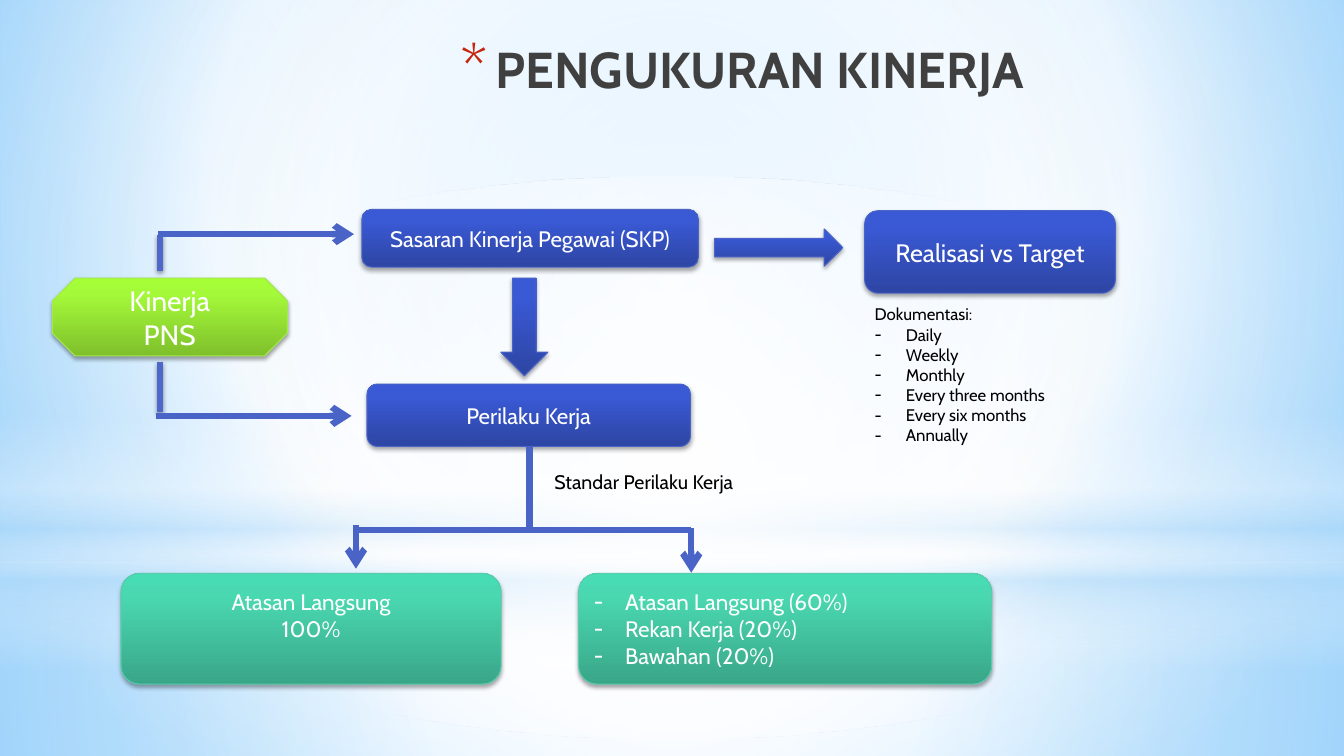
import lxml.etree
import pptx
import pptx.dml.color
import pptx.enum.shapes
import pptx.enum.text
import pptx.oxml.ns
import pptx.util

Cm, Pt = pptx.util.Cm, pptx.util.Pt
SHAPE = pptx.enum.shapes.MSO_SHAPE
ALIGN = pptx.enum.text.PP_ALIGN
ANCHOR = pptx.enum.text.MSO_ANCHOR

WIDTH, HEIGHT = 33.87, 19.05
FONT = "Cabin"
CENTRE = (50, 50, 50, 50)

# Gradient from bottom to top, then the outline
BLUE = ("2D45A3", "3A59D4", "3758D7"), "4963C7"
TEAL = ("39A688", "4AD8B1", "47DCB3"), "58CCAC"
GREEN = ("7FC02C", "A4F939", "A6FE36"), "A4E94C"


def colour(value):
    return pptx.dml.color.RGBColor.from_string(value)


def add_node(parent, tag, **attributes):
    node = lxml.etree.SubElement(parent, pptx.oxml.ns.qn(tag))
    for name, value in attributes.items():
        node.set(name, str(value))
    return node


def add_colour_node(parent, value, opacity=100):
    node = add_node(parent, "a:srgbClr", val=value)
    if opacity < 100:
        add_node(node, "a:alpha", val=opacity * 1000)


def paint_gradient(holder, stops, angle=None, focus=None):
    """Replace the solid fill in holder; stops are (position, colour[, opacity])."""
    gradient = add_node(holder, "a:gradFill", rotWithShape=1)
    stop_list = add_node(gradient, "a:gsLst")
    for position, *paint in stops:
        add_colour_node(add_node(stop_list, "a:gs", pos=position * 1000), *paint)
    if focus:
        circle = add_node(gradient, "a:path", path="circle")
        sides = {side: part * 1000 for side, part in zip("ltrb", focus)}
        add_node(circle, "a:fillToRect", **sides)
    else:
        add_node(gradient, "a:lin", ang=angle * 60000, scaled=0)
    holder.replace(holder.find(pptx.oxml.ns.qn("a:solidFill")), gradient)


def add_shadow(effects, opacity, distance):
    shadow = add_node(effects, "a:outerShdw", blurRad=Pt(3.1), dist=Pt(distance),
                      dir=90 * 60000, rotWithShape=0)
    add_colour_node(shadow, "000000", opacity)


def add_bullet(para, mark, indent, mark_colour=None, size=None):
    properties = para._p.get_or_add_pPr()
    properties.set("marL", str(Cm(indent)))
    properties.set("indent", str(-Cm(indent)))
    if mark_colour:
        add_colour_node(add_node(properties, "a:buClr"), mark_colour)
    if size:
        add_node(properties, "a:buSzPct", val=size * 1000)
    add_node(properties, "a:buFont", typeface=FONT)
    add_node(properties, "a:buChar", char=mark)


def write(frame, lines, size, ink="000000", bold=False, align=ALIGN.LEFT,
          anchor=ANCHOR.TOP, dashes_from=None):
    """Write one paragraph per line, with dashes from the given line on."""
    frame.word_wrap = True
    frame.auto_size = pptx.enum.text.MSO_AUTO_SIZE.NONE
    frame.vertical_anchor = anchor
    for index, line in enumerate(lines):
        para = frame.paragraphs[0] if index == 0 else frame.add_paragraph()
        para.alignment = align
        span = para.add_run()
        span.text = line
        span.font.name, span.font.size, span.font.bold = FONT, Pt(size), bold
        span.font.color.rgb = colour(ink)
        if dashes_from is not None and index >= dashes_from:
            add_bullet(para, "-", 0.79)


def add_backdrop(page, kind, top, height, stops, **direction):
    shape = page.shapes.add_shape(kind, 0, Cm(top), Cm(WIDTH), Cm(height))
    shape.shadow.inherit = False
    shape.line.fill.background()
    shape.fill.solid()
    paint_gradient(shape.element.spPr, stops, **direction)


def add_box(page, kind, place, theme, lines=(), size=16, **text_format):
    shades, outline = theme
    box = page.shapes.add_shape(kind, *map(Cm, place))
    box.fill.solid()
    paint_gradient(box.element.spPr, zip((0, 80, 100), shades), angle=270)
    box.line.color.rgb = colour(outline)
    box.line.width = Pt(0.75)
    box.shadow.inherit = False
    add_shadow(box.element.spPr.find(pptx.oxml.ns.qn("a:effectLst")), 35, 1.8)
    settings = {"ink": "FFFFFF", "align": ALIGN.CENTER, "anchor": ANCHOR.MIDDLE}
    write(box.text_frame, lines, size, **(settings | text_format))
    return box


def add_note(page, place, lines, size, **text_format):
    box = page.shapes.add_textbox(*map(Cm, place))
    write(box.text_frame, lines, size, **text_format)


def add_line(page, ends, ink="4963C7", arrow=False, shadow=False):
    line = page.shapes.add_connector(
        pptx.enum.shapes.MSO_CONNECTOR.STRAIGHT, *map(Cm, ends))
    line.line.color.rgb = colour(ink)
    line.line.width = Pt(4.5)
    properties = line.element.spPr
    if arrow:
        add_node(properties.find(pptx.oxml.ns.qn("a:ln")), "a:tailEnd", type="arrow")
    effects = add_node(properties, "a:effectLst")
    if shadow:
        add_shadow(effects, 38, 1.6)


def paint_background(page):
    page.background.fill.solid()
    holder = page.background._cSld.bg.bgPr
    paint_gradient(holder, [(0, "9ED5FF"), (60, "FFFFFF"), (100, "5BB9FF")],
                   focus=(20, 10, 20, 60))
    horizon = 14.17
    add_backdrop(page, SHAPE.RECTANGLE, horizon, HEIGHT - horizon,
                 [(0, "FFFFFF", 91), (37, "FFFFFF", 76), (100, "B4DCFA", 79)],
                 focus=CENTRE)
    add_backdrop(page, SHAPE.RECTANGLE, 0, horizon,
                 [(0, "FFFFFF", 89), (48, "FFFFFF", 62), (100, "B4DCFA", 79)],
                 focus=CENTRE)
    add_backdrop(page, SHAPE.RECTANGLE, 10.46, 6.35,
                 [(0, "FFFFFF", 0), (29, "FFFFFF", 30), (45, "B4DCFA", 40),
                  (55, "FFFFFF", 26), (65, "B4DCFA", 60), (100, "FFFFFF", 0)],
                 angle=90)
    add_backdrop(page, SHAPE.OVAL, 4.45, horizon,
                 [(0, "FFFFFF"), (56, "FFFFFF", 0)], focus=CENTRE)


def add_title(page, text):
    title = page.shapes.title
    title.left, title.top, title.width, title.height = map(
        Cm, (1.93, 0.84, 24.13, 3.18))
    write(title.text_frame, [text], 36, ink="404040", bold=True, align=ALIGN.RIGHT)
    add_bullet(title.text_frame.paragraphs[0], "*", 0.89, "C3260C", 128)
    title.element.getparent().append(title.element)  # in front of the backdrop


def main():
    deck = pptx.Presentation()
    deck.slide_width, deck.slide_height = Cm(WIDTH), Cm(HEIGHT)
    page = deck.slides.add_slide(deck.slide_layouts.get_by_name("Title Only"))
    paint_background(page)
    add_title(page, "PENGUKURAN KINERJA")

    # Performance and its two components
    rounded = SHAPE.ROUNDED_RECTANGLE
    add_box(page, rounded, (9.12, 5.28, 8.48, 1.45), BLUE,
            ["Sasaran Kinerja Pegawai (SKP)"])
    add_box(page, rounded, (21.79, 5.31, 6.32, 2.08), BLUE,
            ["Realisasi vs Target"], size=18)
    add_box(page, rounded, (9.25, 9.68, 8.15, 1.57), BLUE, ["Perilaku Kerja"])
    add_box(page, SHAPE.OCTAGON, (1.32, 7.01, 5.92, 1.96), GREEN,
            ["Kinerja", "PNS"], size=20)
    add_box(page, SHAPE.RIGHT_ARROW, (18.01, 5.77, 3.23, 0.94), BLUE)
    add_box(page, SHAPE.DOWN_ARROW, (12.62, 7.01, 1.19, 2.46), BLUE)

    # Assessors
    superior = add_box(page, rounded, (3.05, 14.45, 9.58, 2.79), TEAL,
                       ["Atasan Langsung", "100%"])
    superior.text_frame.margin_bottom = Cm(0.8)
    add_box(page, rounded, (14.58, 14.45, 10.41, 2.79), TEAL,
            ["Atasan Langsung (60%)", "Rekan Kerja (20%)", "Bawahan (20%)"],
            align=ALIGN.JUSTIFY, dashes_from=0)

    # Notes
    add_note(page, (21.79, 7.54, 9.7, 4.37),
             ["Dokumentasi:", "Daily", "Weekly", "Monthly", "Every three months",
              "Every six months", "Annually"], 12, dashes_from=1)
    add_note(page, (13.72, 11.71, 6.68, 0.86), ["Standar Perilaku Kerja"], 14)

    # Lines from performance to its components
    for start, end in ((5.92, 6.83), (10.39, 9.12)):
        add_line(page, (4.04, start, 4.04, end), ink="4E67C8", shadow=True)
    add_line(page, (3.99, 5.9, 8.92, 5.9), arrow=True)
    add_line(page, (3.94, 10.48, 8.86, 10.48), arrow=True)

    # Branch from behaviour to the assessors
    left, middle, right, branch = 8.97, 13.34, 17.42, 13.36
    add_line(page, (middle, 11.25, middle, branch))
    add_line(page, (left, branch, right, branch))
    add_line(page, (right, 13.31, right, 14.43), arrow=True)
    add_line(page, (left, 13.23, left, 14.33), arrow=True)

    deck.save("out.pptx")


if __name__ == "__main__":
    main()
